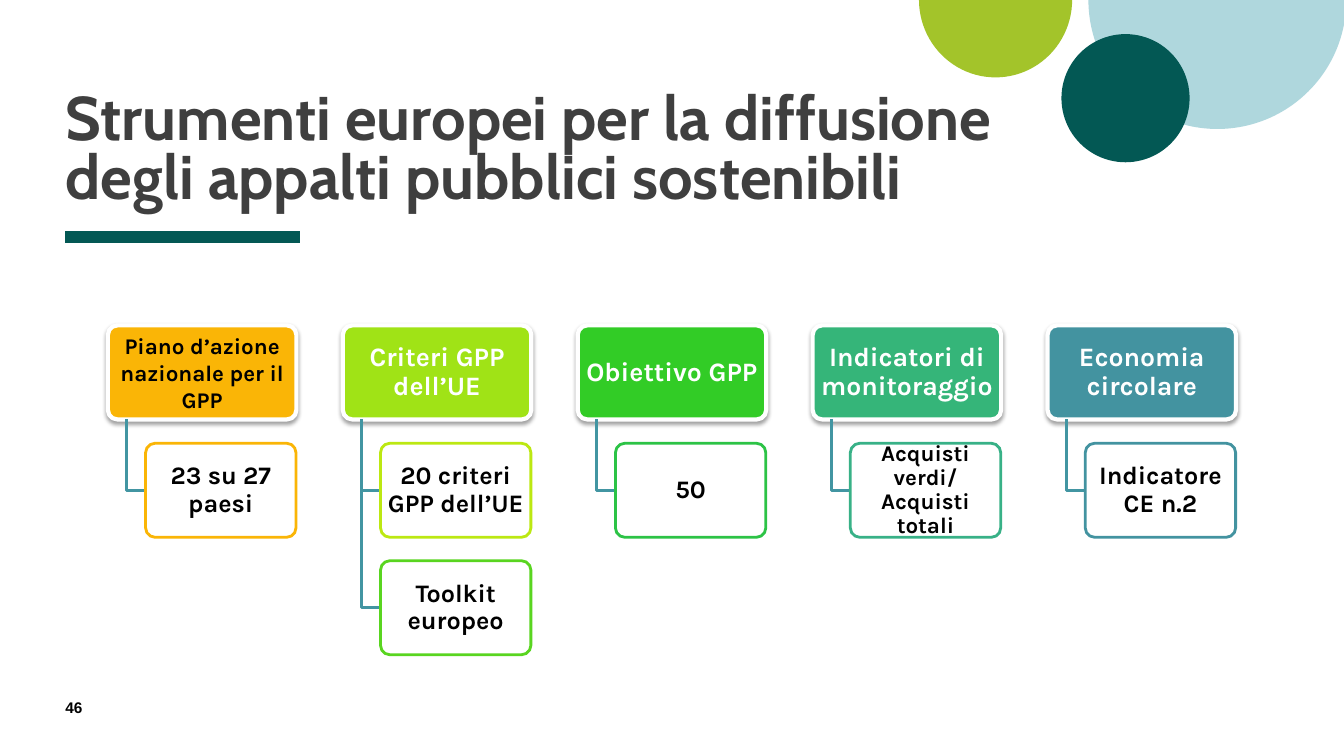
from dataclasses import dataclass

from lxml import etree
from pptx import Presentation
from pptx.dml.color import RGBColor
from pptx.enum.shapes import MSO_CONNECTOR, MSO_SHAPE
from pptx.enum.text import MSO_ANCHOR, MSO_AUTO_SIZE, PP_ALIGN
from pptx.oxml.ns import qn
from pptx.util import Cm, Pt

STRAIGHT = MSO_CONNECTOR.STRAIGHT
PIE, OVAL, ROUNDED = MSO_SHAPE.PIE, MSO_SHAPE.OVAL, MSO_SHAPE.ROUNDED_RECTANGLE
TOP, MIDDLE, BOTTOM = MSO_ANCHOR.TOP, MSO_ANCHOR.MIDDLE, MSO_ANCHOR.BOTTOM
LEFT, CENTER = PP_ALIGN.LEFT, PP_ALIGN.CENTER
NO_AUTOFIT = MSO_AUTO_SIZE.NONE

TITLE = "Strumenti europei per la diffusione degli appalti pubblici sostenibili"
PAGE_NUMBER = "46"

BRANCHES = [
    ("Piano d’azione nazionale per il GPP", "FAB506", "000000", 16, 1.0,
     [("23 su 27 paesi", "FAB506", 18)]),
    ("Criteri GPP dell’UE", "A0E316", "FFFFFF", 19, 0.9,
     [("20 criteri GPP dell’UE", "BCE812", 18), ("Toolkit europeo", "59D520", 18)]),
    ("Obiettivo GPP", "32CC26", "FFFFFF", 19, 0.9,
     [("50", "2CC346", 18)]),
    ("Indicatori di monitoraggio", "35B579", "FFFFFF", 19, 0.9,
     [("Acquisti verdi/\nAcquisti totali", "38B187", 16)]),
    ("Economia circolare", "4393A0", "FFFFFF", 19, 0.9,
     [("Indicatore CE n.2", "4393A0", 18)]),
]

CIRCLES = [
    (PIE, 27.43, -3.25, 6.5, 6.5, "AFD7DD"),
    (PIE, 23.16, -1.96, 3.86, 3.91, "A3C42A"),
    (OVAL, 26.75, 0.86, 3.23, 3.23, "035854"),
]


@dataclass
class Theme:
    title_font: str = "Cabin"
    body_font: str = "Karla"
    number_font: str = "Arial"
    title_size: int = 44
    number_size: int = 11
    title_color: str = "3F3F3F"
    text_color: str = "000000"
    accent: str = "035854"
    branch_line: str = "4295A2"
    white: str = "FFFFFF"


THEME = Theme()
MARGIN = 1.65
FIRST_LEFT, COLUMN_PITCH = 2.72, 5.92
HEADING_TOP, HEADING_WIDTH, BOX_HEIGHT = 8.2, 4.75, 2.37
ITEM_INDENT, ITEM_WIDTH = 0.95, 3.79
ITEM_TOP, ITEM_PITCH = 11.17, 2.96
TRUNK_INDENT = 0.47


def rgb(color):
    return RGBColor.from_string(color)


def write(box, text, font, size, color, align, anchor, spacing=1.0, insets=(0, 0)):
    frame = box.text_frame
    frame.word_wrap = True
    frame.auto_size = NO_AUTOFIT
    frame.vertical_anchor = anchor
    frame.margin_left = frame.margin_right = Cm(insets[0])
    frame.margin_top = frame.margin_bottom = Cm(insets[1])
    frame.text = text
    for para in frame.paragraphs:
        para.alignment = align
        para.line_spacing = spacing
        for span in para.runs:
            span.font.name = font
            span.font.size = Pt(size)
            span.font.bold = True
            span.font.color.rgb = rgb(color)


def add_filled(page, kind, left, top, width, height, color):
    shape = page.shapes.add_shape(kind, Cm(left), Cm(top), Cm(width), Cm(height))
    shape.shadow.inherit = False
    shape.fill.solid()
    shape.fill.fore_color.rgb = rgb(color)
    shape.line.fill.background()
    return shape


def set_alpha(color_element, percent):
    etree.SubElement(color_element, qn("a:alpha"), val=str(percent * 1000))


def add_card(page, left, top, width, fill, outline, outline_width):
    card = add_filled(page, ROUNDED, left, top, width, BOX_HEIGHT, fill)
    card.adjustments[0] = 0.1
    card.line.color.rgb = rgb(outline)
    card.line.width = Pt(outline_width)
    return card


def add_heading(page, left, text, fill, color, size, spacing):
    card = add_card(page, left, HEADING_TOP, HEADING_WIDTH, fill, THEME.white, 3)
    effects = card._element.spPr.find(qn("a:effectLst"))
    shadow = etree.SubElement(effects, qn("a:outerShdw"), blurRad=str(Pt(3.1)),
                              dist=str(Pt(1.6)), dir="5400000", rotWithShape="0")
    set_alpha(etree.SubElement(shadow, qn("a:srgbClr"), val="000000"), 37)
    write(card, text, THEME.body_font, size, color, CENTER, MIDDLE, spacing, (0.1, 0.07))


def add_item(page, left, top, text, outline, size):
    card = add_card(page, left, top, ITEM_WIDTH, THEME.white, outline, 2)
    set_alpha(card._element.spPr.find(qn("a:solidFill"))[0], 89)
    write(card, text, THEME.body_font, size, THEME.text_color, CENTER, MIDDLE, 0.9, (0.1, 0.07))


def add_elbow(page, trunk, start, end, arm):
    builder = page.shapes.build_freeform(Cm(trunk), Cm(start))
    builder.add_line_segments([(Cm(trunk), Cm(end)), (Cm(arm), Cm(end))], close=False)
    elbow = builder.convert_to_shape()
    elbow.shadow.inherit = False
    elbow.fill.background()
    elbow.line.color.rgb = rgb(THEME.branch_line)
    elbow.line.width = Pt(2)


def add_decoration(page):
    rule = page.shapes.add_connector(STRAIGHT, Cm(MARGIN), Cm(5.97), Cm(7.57), Cm(5.97))
    rule.line.color.rgb = rgb(THEME.accent)
    rule.line.width = Pt(8)
    etree.SubElement(rule._element.spPr, qn("a:effectLst"))
    for kind, *place, color in CIRCLES:
        circle = add_filled(page, kind, *place, color)
        if kind == PIE:
            circle.adjustments[0] = 0
            circle.adjustments[1] = 108


def add_branches(page):
    for column, (text, fill, color, size, spacing, items) in enumerate(BRANCHES):
        left = FIRST_LEFT + column * COLUMN_PITCH
        add_heading(page, left, text, fill, color, size, spacing)
        for row, (label, outline, label_size) in enumerate(items):
            top = ITEM_TOP + row * ITEM_PITCH
            item_left = left + ITEM_INDENT
            add_elbow(page, left + TRUNK_INDENT, HEADING_TOP + BOX_HEIGHT,
                      top + BOX_HEIGHT / 2, item_left)
            add_item(page, item_left, top, label, outline, label_size)


def main():
    deck = Presentation()
    deck.slide_width, deck.slide_height = Cm(33.87), Cm(19.05)
    page = deck.slides.add_slide(deck.slide_layouts[5])
    add_decoration(page)

    title = page.shapes.title
    title.left, title.top, title.width, title.height = Cm(MARGIN), Cm(1.19), Cm(24.82), Cm(4.14)
    write(title, TITLE, THEME.title_font, THEME.title_size, THEME.title_color,
          LEFT, BOTTOM, 0.8)

    number = page.shapes.add_textbox(Cm(MARGIN), Cm(17.58), Cm(1.45), Cm(0.69))
    write(number, PAGE_NUMBER, THEME.number_font, THEME.number_size, THEME.text_color, LEFT, TOP)

    add_branches(page)
    deck.save("out.pptx")


if __name__ == "__main__":
    main()
